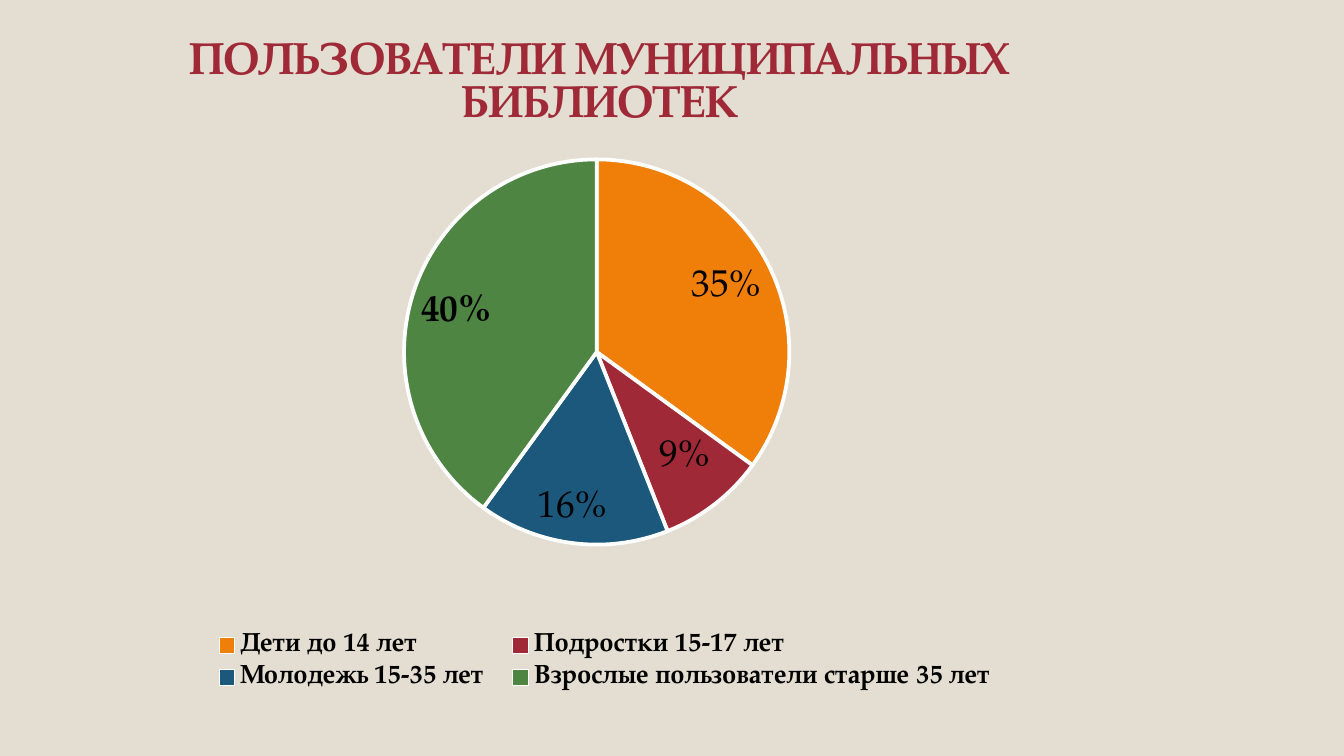
from lxml import etree
from pptx import Presentation
from pptx.chart.data import CategoryChartData
from pptx.dml.color import RGBColor
from pptx.enum import chart as kinds
from pptx.oxml import ns
from pptx.util import Inches, Pt

COLORS = {
    "background": "E3DED1",
    "text": "000000",
    "title": "9F2936",
    "border": "FFFFFF",
    "children": "F07F09",
    "teens": "9F2936",
    "youth": "1B587C",
    "adults": "4E8542",
}
READERS = [
    ("Дети до 14 лет", 35, "children", (0, 0)),
    ("Подростки 15-17 лет ", 9, "teens", (0, -0.03)),
    ("Молодежь 15-35 лет ", 16, "youth", (-0.03, -0.01)),
    ("Взрослые пользователи старше 35 лет", 40, "adults", (0, 0)),
]


class SlideStyle:
    font_name = "TeX Gyre Pagella"

    def __init__(self, page):
        self.page = page

    def color(self, name):
        return RGBColor.from_string(COLORS[name])

    def background(self, name):
        fill = self.page.background.fill
        fill.solid()
        fill.fore_color.rgb = self.color(name)

    def set_font(self, font, size, bold=False, color="text"):
        font.name = self.font_name
        font.size = Pt(size)
        font.bold = bold
        font.color.rgb = self.color(color)

    def place(self, parent, index, edge=True, **fractions):
        for old in parent.findall(ns.qn("c:layout")):
            parent.remove(old)
        layout = etree.Element(ns.qn("c:layout"))
        manual = etree.SubElement(layout, ns.qn("c:manualLayout"))
        if index == 0:
            etree.SubElement(manual, ns.qn("c:layoutTarget"), val="inner")
        if edge:
            for axis in "xy":
                etree.SubElement(manual, ns.qn(f"c:{axis}Mode"), val="edge")
        for key, value in fractions.items():
            etree.SubElement(manual, ns.qn(f"c:{key}"), val=str(value))
        parent.insert(index, layout)

    def pie(self, title, readers, left, top, width, height):
        data = CategoryChartData()
        data.categories = [name for name, *_ in readers]
        data.add_series("Series 1", [share for _, share, *_ in readers])
        chart = self.page.shapes.add_chart(
            kinds.XL_CHART_TYPE.PIE,
            Inches(left), Inches(top), Inches(width), Inches(height), data,
        ).chart
        self.set_font(chart.font, 10)
        self.title(chart, title)
        self.legend(chart)
        self.slices(chart.plots[0], readers)
        plot_area = chart._chartSpace.chart.plotArea
        self.place(plot_area, 0, x=1 / 3, y=0.22, w=0.32, h=0.56)

    def title(self, chart, words):
        frame = chart.chart_title.text_frame
        frame.text = words
        paragraph = frame.paragraphs[0]
        for font in (paragraph.font, paragraph.runs[0].font):
            self.set_font(font, 24, True, "title")
        chart.chart_title.include_in_layout = False
        self.place(chart.chart_title._element, 1, x=0.15, y=0.03)

    def legend(self, chart):
        chart.has_legend = True
        legend = chart.legend
        legend.position = kinds.XL_LEGEND_POSITION.BOTTOM
        legend.include_in_layout = False
        self.set_font(legend.font, 14, True)
        self.place(legend._element, 1, x=0.17, y=0.9, w=0.66, h=0.1)

    def slices(self, plot, readers):
        plot.vary_by_categories = True
        series = plot.series[0]
        labels = series.data_labels
        labels.show_value = True
        labels.number_format = "0%"
        labels.number_format_is_linked = False
        labels.position = kinds.XL_LABEL_POSITION.INSIDE_END
        self.set_font(labels.font, 20, True)
        for index, (_, share, name, offset) in enumerate(readers):
            point = series.points[index]
            point.format.fill.solid()
            point.format.fill.fore_color.rgb = self.color(name)
            point.format.line.color.rgb = self.color("border")
            point.format.line.width = Pt(2)
            self.label(point.data_label, f"{share}%", name == "adults", offset)

    def label(self, label, words, bold, offset):
        label.text_frame.text = words
        paragraph = label.text_frame.paragraphs[0]
        for font in (paragraph.font, paragraph.runs[0].font):
            self.set_font(font, 20, bold)
        label.position = kinds.XL_LABEL_POSITION.INSIDE_END
        if any(offset):
            element = label._get_or_add_dLbl()
            self.place(element, 1, edge=False, x=offset[0], y=offset[1])


def main():
    deck = Presentation()
    deck.slide_width, deck.slide_height = Inches(10), Inches(10 * 9 / 16)
    style = SlideStyle(deck.slides.add_slide(deck.slide_layouts[6]))
    style.background("background")
    style.pie("ПОЛЬЗОВАТЕЛИ МУНИЦИПАЛЬНЫХ БИБЛИОТЕК", READERS, 0, 0.06, 9, 5.12)
    deck.save("out.pptx")


if __name__ == "__main__":
    main()
